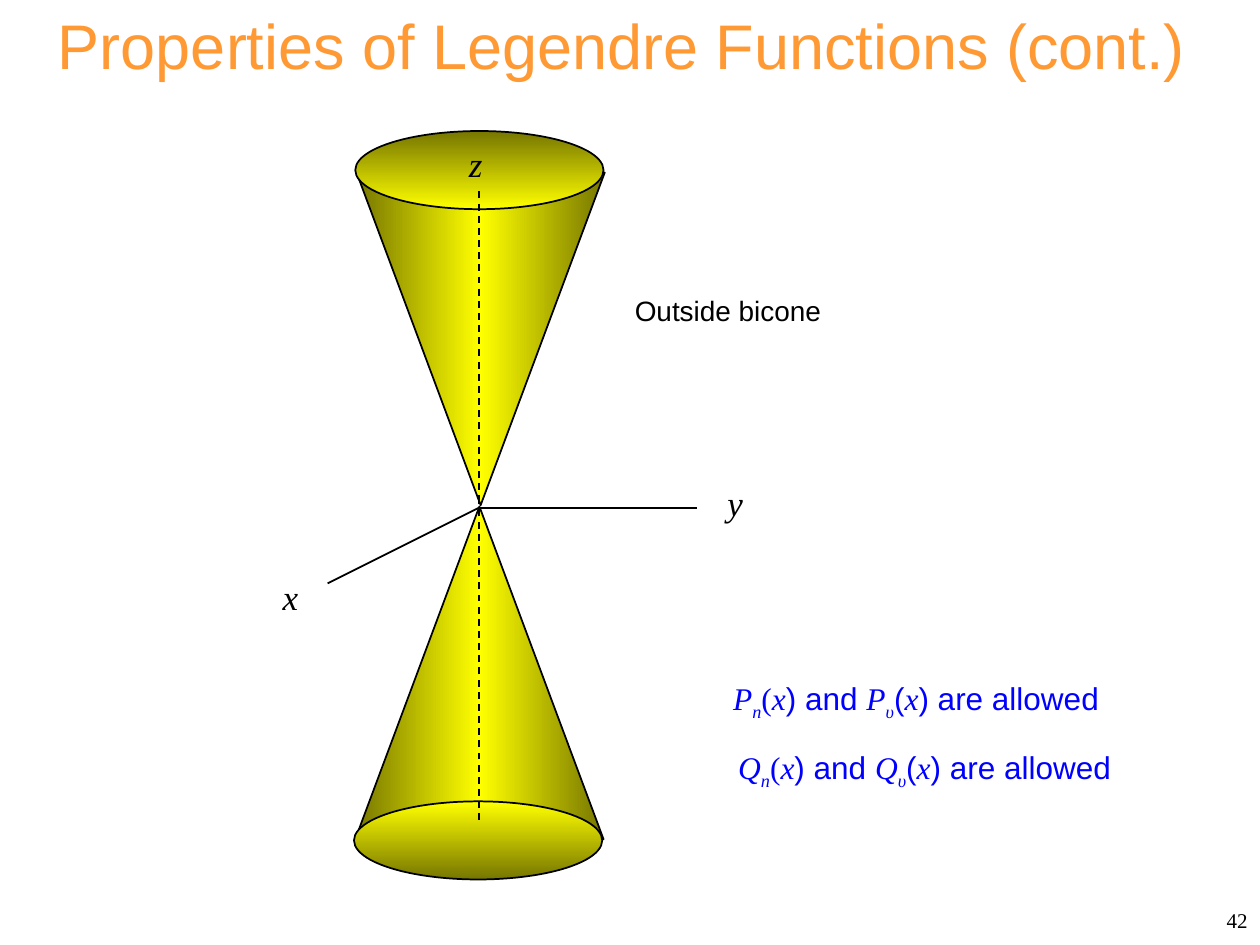
from collections import namedtuple
from copy import deepcopy
from dataclasses import dataclass

from lxml.etree import SubElement
from pptx import Presentation
from pptx.dml.color import RGBColor
from pptx.enum.dml import MSO_LINE
from pptx.enum.shapes import MSO_CONNECTOR, MSO_SHAPE
from pptx.enum.text import MSO_ANCHOR, MSO_AUTO_SIZE, PP_ALIGN
from pptx.oxml.ns import qn
from pptx.util import Inches, Pt

Box = namedtuple("Box", "left top width height")


@dataclass(frozen=True)
class Theme:
    """Colours, fonts and type sizes of the slide."""
    ink: str = "000000"
    title: str = "FF9933"
    formula: str = "0000FF"
    paper: str = "FFFFFF"
    shade: str = "767600"
    glow: str = "FFFF00"
    sans: str = "Arial"
    serif: str = "Times New Roman"
    title_size: int = 36
    axis_size: int = 20
    formula_size: int = 18
    note_size: int = 16
    number_size: int = 12
    line: int = 1


THEME = Theme()


def within(box, left, top, width, height):
    """Return a box given by its offset from another box."""
    return Box(box.left + left, box.top + top, width, height)


def add_run(paragraph, text, color, **formats):
    """Add a run and set its font attributes."""
    run = paragraph.add_run()
    run.text = text
    run.font.color.rgb = RGBColor.from_string(color)
    for attribute, value in formats.items():
        setattr(run.font, attribute, value)
    return run


def add_text(slide, box, align=PP_ALIGN.LEFT, **formats):
    """Add a text box and return it with its empty paragraph."""
    holder = slide.shapes.add_textbox(*map(Inches, box))
    settings = {"word_wrap": True, "auto_size": MSO_AUTO_SIZE.SHAPE_TO_FIT_TEXT} | formats
    for attribute, value in settings.items():
        setattr(holder.text_frame, attribute, value)
    paragraph = holder.text_frame.paragraphs[0]
    paragraph.alignment = align
    return holder, paragraph


def add_solid(slide, kind, box, colors, angle, flip=False):
    """Add an outlined shape with a linear gradient of evenly spaced colours."""
    solid = slide.shapes.add_shape(kind, *map(Inches, box))
    solid.shadow.inherit = False
    solid.line.color.rgb = RGBColor.from_string(THEME.ink)
    solid.line.width = Pt(THEME.line)
    solid.fill.gradient()
    solid.fill.gradient_angle = angle
    stop_list = solid.element.find(".//" + qn("a:gsLst"))
    for _ in colors[2:]:
        stop_list.append(deepcopy(stop_list[0]))
    for index, (stop, color) in enumerate(zip(solid.fill.gradient_stops, colors)):
        stop.position = index / (len(colors) - 1)
        stop.color.rgb = RGBColor.from_string(color)
    if flip:
        solid.element.spPr.find(qn("a:xfrm")).set("flipV", "1")


def add_axis(slide, box, start, end, dash=None):
    """Draw an axis between two points offset from the box."""
    points = (box.left + start[0], box.top + start[1], box.left + end[0], box.top + end[1])
    axis = slide.shapes.add_connector(MSO_CONNECTOR.STRAIGHT, *map(Inches, points))
    axis.line.color.rgb = RGBColor.from_string(THEME.ink)
    axis.line.width = Pt(THEME.line)
    if dash:
        axis.line.dash_style = dash
    SubElement(axis.element.spPr, qn("a:effectLst"))


def add_title(slide, box):
    """Place the slide title."""
    _, heading = add_text(slide, box, PP_ALIGN.CENTER)
    add_run(heading, "Properties of Legendre Functions (cont.)", THEME.title,
            name=THEME.sans, size=Pt(THEME.title_size))


def add_page_number(slide, box):
    """Place the page number."""
    _, number = add_text(slide, box, PP_ALIGN.RIGHT, auto_size=MSO_AUTO_SIZE.NONE,
                         vertical_anchor=MSO_ANCHOR.MIDDLE)
    add_run(number, "42", THEME.ink, name=THEME.serif, size=Pt(THEME.number_size))


def add_bicone(slide, box):
    """Draw two cones that meet at the origin, with the axes and labels."""
    cone_height, rim_height = 2.64, 0.62
    middle, origin = 0.99, 2.99
    sides = (THEME.shade, THEME.glow, THEME.shade)
    rim = (THEME.shade, THEME.glow)

    add_solid(slide, MSO_SHAPE.ISOSCELES_TRIANGLE,
              within(box, 0.01, origin - 0.01, box.width, cone_height), sides, 0)
    add_solid(slide, MSO_SHAPE.OVAL,
              within(box, 0, box.height - rim_height, box.width, rim_height), rim[::-1], 270)
    add_axis(slide, box, (middle, 5.47), (middle, 2.94), MSO_LINE.DASH)
    add_axis(slide, box, (middle, origin), (2.72, origin))
    add_axis(slide, box, (middle, origin), (-0.21, 3.59))
    add_solid(slide, MSO_SHAPE.ISOSCELES_TRIANGLE,
              within(box, 0.02, 0.33, box.width, cone_height), sides, 0, flip=True)
    add_solid(slide, MSO_SHAPE.OVAL, within(box, 0.01, 0, box.width, rim_height), rim, 270)
    add_axis(slide, box, (middle, 0.48), (middle, 3.02), MSO_LINE.DASH)

    for name, left, top, width in (("y", 2.72, 2.73, 0.61), ("x", -0.69, 3.48, 0.37),
                                   ("z", 0.74, 0.04, 0.45)):
        _, label = add_text(slide, within(box, left, top, width, 0.43), PP_ALIGN.CENTER)
        add_run(label, name, THEME.ink, name=THEME.serif, size=Pt(THEME.axis_size), italic=True)


def add_region_note(slide, box):
    """Name the region outside the cones."""
    holder, note = add_text(slide, box, word_wrap=False)
    holder.fill.solid()
    holder.fill.fore_color.rgb = RGBColor.from_string(THEME.paper)
    add_run(note, "Outside bicone", THEME.ink, name=THEME.sans, size=Pt(THEME.note_size))


def add_formula(slide, box, function):
    """State that both orders of a Legendre function are allowed."""
    _, formula = add_text(slide, box, word_wrap=False)
    for order, bracket_font, ending in (("n", THEME.serif, ") and "),
                                        ("υ", THEME.sans, ") are allowed")):
        for text, font, italic in ((function, THEME.serif, True), (order, THEME.serif, True),
                                   ("(", bracket_font, False), ("x", THEME.serif, True),
                                   (ending, THEME.sans, False)):
            run = add_run(formula, text, THEME.formula, name=font, italic=italic,
                          size=Pt(THEME.formula_size))
            if text == order:
                run.font._element.set("baseline", "-25000")


def main():
    """Build the slide and save it."""
    deck = Presentation()
    deck.slide_width, deck.slide_height = Inches(10), Inches(7.5)
    slide = deck.slides.add_slide(deck.slide_layouts[6])
    add_title(slide, Box(0.27, 0, 9.33, 0.7))
    add_page_number(slide, Box(7.67, 7.1, 2.33, 0.4))
    add_bicone(slide, Box(2.81, 1.04, 1.97, 5.94))
    add_region_note(slide, Box(4.94, 2.28, 1.7, 0.37))
    add_formula(slide, Box(5.72, 5.34, 3.24, 0.4), "P")
    add_formula(slide, Box(5.76, 5.89, 3.29, 0.4), "Q")
    deck.save("out.pptx")


if __name__ == "__main__":
    main()
